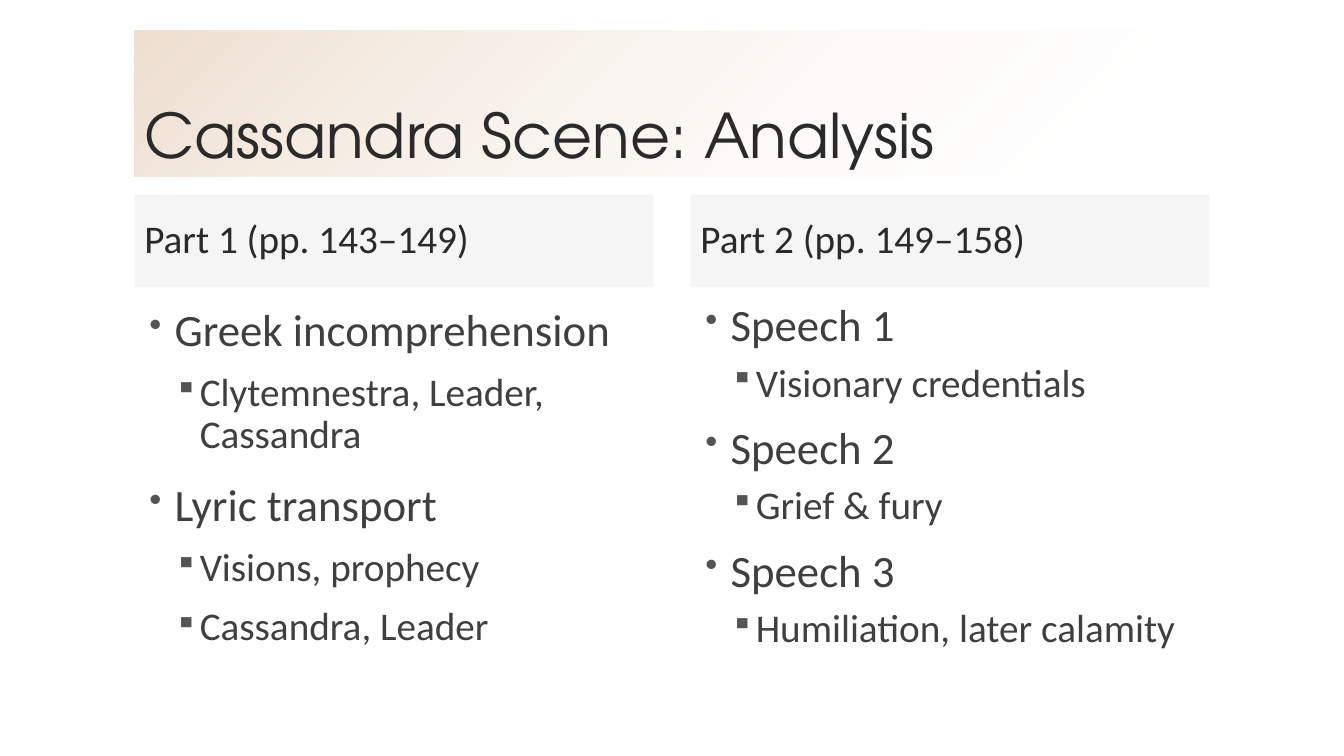
from dataclasses import dataclass

from lxml import etree
from pptx import Presentation
from pptx.dml.color import RGBColor
from pptx.enum.shapes import MSO_SHAPE
from pptx.enum.text import MSO_ANCHOR, PP_ALIGN
from pptx.oxml.ns import qn
from pptx.util import Pt

RECTANGLE = MSO_SHAPE.RECTANGLE
LEFT = PP_ALIGN.LEFT
TOP, MIDDLE, BOTTOM = MSO_ANCHOR.TOP, MSO_ANCHOR.MIDDLE, MSO_ANCHOR.BOTTOM

INK, BODY_INK, BULLET_INK = "2A2A2A", "3F3F3F", "545454"
HEADING_FONT, BODY_FONT = "TeX Gyre Adventor", "Calibri"
MARGIN, CONTENT_WIDTH, COLUMN_WIDTH = 96, 768, 370.8


@dataclass(frozen=True)
class Level:
    size: float
    indent: float
    space_before: float
    bullet: str


@dataclass(frozen=True)
class Column:
    heading: str
    line_spacing: float
    items: tuple[tuple[int, str], ...]


LEVELS = (Level(32, 21.6, 18, "•"), Level(28, 39.6, 12, "▪"))
HANGING = 18

COLUMNS = (
    Column("Part 1 (pp. 143–149)", 0.9, (
        (0, "Greek incomprehension"),
        (1, "Clytemnestra, Leader, Cassandra"),
        (0, "Lyric transport"),
        (1, "Visions, prophecy"),
        (1, "Cassandra, Leader"),
    )),
    Column("Part 2 (pp. 149–158)", 0.8, (
        (0, "Speech 1"),
        (1, "Visionary credentials"),
        (0, "Speech 2"),
        (1, "Grief & fury"),
        (0, "Speech 3"),
        (1, "Humiliation, later calamity"),
    )),
)


def color(value: str) -> RGBColor:
    return RGBColor.from_string(value)


def apply(target, formats: dict) -> None:
    for name, value in formats.items():
        setattr(target, name, value)


def set_opacity(shape, percents: tuple[int, ...]) -> None:
    tones = shape._element.spPr.iter(qn("a:srgbClr"))
    for tone, percent in zip(tones, percents):
        etree.SubElement(tone, qn("a:alpha"), val=str(percent * 1000))


def add_panel(page, left: float, top: float, width: float, height: float):
    panel = page.shapes.add_shape(RECTANGLE, Pt(left), Pt(top), Pt(width), Pt(height))
    panel.shadow.inherit = False
    panel.line.fill.background()
    return panel


def write(para, text: str, size: float, font: str, ink: str, spacing: float) -> None:
    apply(para, {"alignment": LEFT, "line_spacing": spacing})
    span = para.add_run()
    span.text = text
    apply(span.font, {"size": Pt(size), "name": font})
    span.font.color.rgb = color(ink)


def add_bullet(para, level: Level) -> None:
    properties = para._p.get_or_add_pPr()
    apply(para, {"space_before": Pt(level.space_before)})
    properties.set("marL", str(Pt(level.indent)))
    properties.set("indent", str(-Pt(HANGING)))
    tint = etree.SubElement(properties, qn("a:buClr"))
    etree.SubElement(tint, qn("a:srgbClr"), val=BULLET_INK)
    etree.SubElement(properties, qn("a:buSzPct"), val="80000")
    etree.SubElement(properties, qn("a:buChar"), char=level.bullet)


def add_title(page, text: str) -> None:
    title = add_panel(page, MARGIN, 21.6, CONTENT_WIDTH, 104.4)
    title.fill.gradient()
    title.fill.gradient_angle = 315
    for stop, tone in zip(title.fill.gradient_stops, ("CE9F71", "FFFFFF")):
        stop.color.rgb = color(tone)
    set_opacity(title, (34, 0))
    apply(title.text_frame, {"word_wrap": True, "vertical_anchor": BOTTOM})
    write(title.text_frame.paragraphs[0], text, 44, HEADING_FONT, INK, 0.9)


def add_column(page, column: Column, left: float) -> None:
    heading = add_panel(page, left, 139, COLUMN_WIDTH, 66.2)
    heading.fill.solid()
    heading.fill.fore_color.rgb = color("BFBFBF")
    set_opacity(heading, (15,))
    apply(heading.text_frame, {"word_wrap": True, "vertical_anchor": MIDDLE})
    write(heading.text_frame.paragraphs[0], column.heading, 28, BODY_FONT, INK, 0.9)

    box = page.shapes.add_textbox(Pt(left), Pt(216), Pt(COLUMN_WIDTH), Pt(270))
    frame = box.text_frame
    apply(frame, {"word_wrap": True, "vertical_anchor": TOP})
    for index, (depth, text) in enumerate(column.items):
        para = frame.add_paragraph() if index else frame.paragraphs[0]
        para.level = depth
        level = LEVELS[depth]
        write(para, text, level.size, BODY_FONT, BODY_INK, column.line_spacing)
        add_bullet(para, level)


def main() -> None:
    deck = Presentation()
    apply(deck, {"slide_width": Pt(960), "slide_height": Pt(540)})
    page = deck.slides.add_slide(deck.slide_layouts[6])
    add_title(page, "Cassandra Scene: Analysis")
    column_step = CONTENT_WIDTH - COLUMN_WIDTH
    for index, column in enumerate(COLUMNS):
        add_column(page, column, MARGIN + index * column_step)
    deck.save("out.pptx")


if __name__ == "__main__":
    main()
